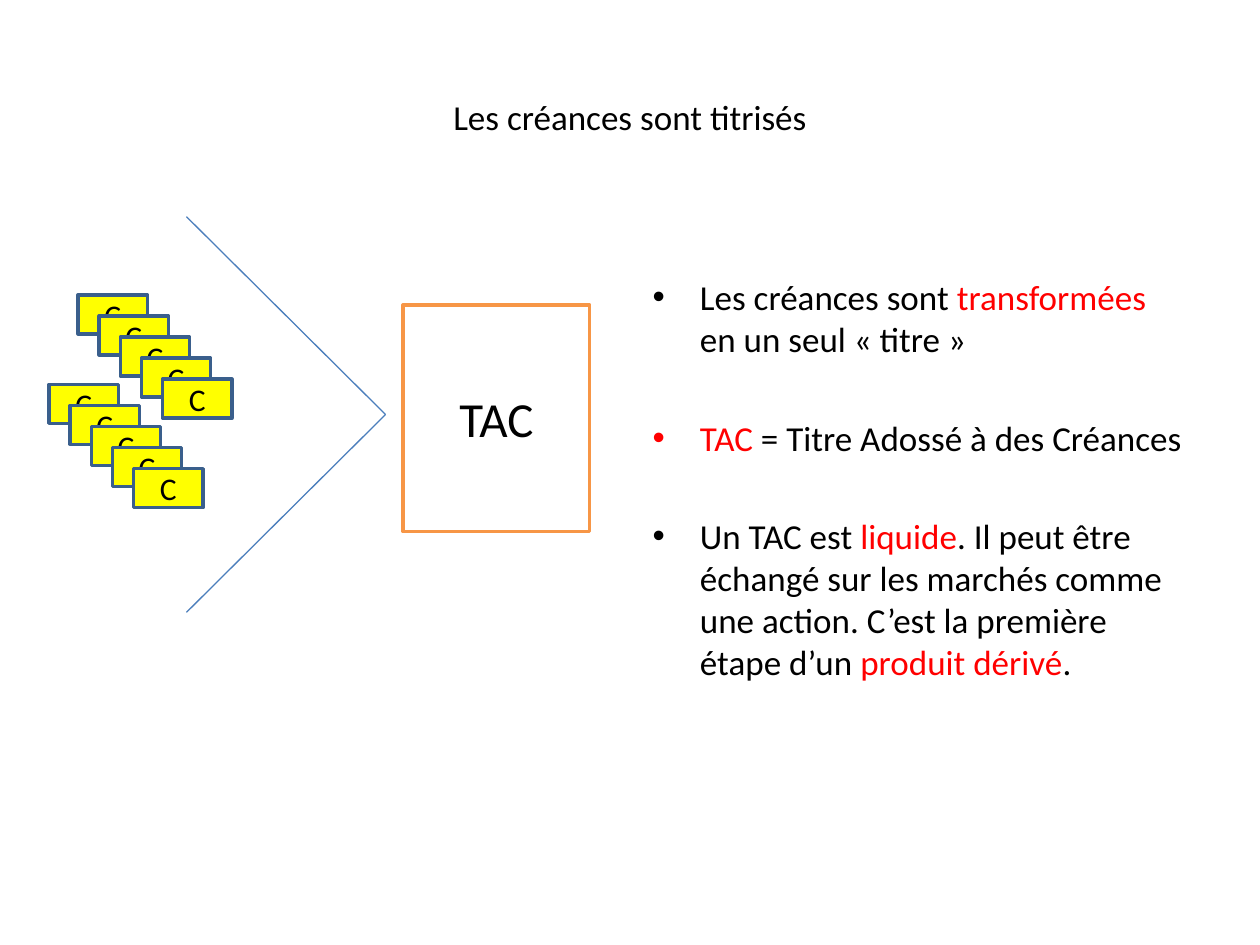
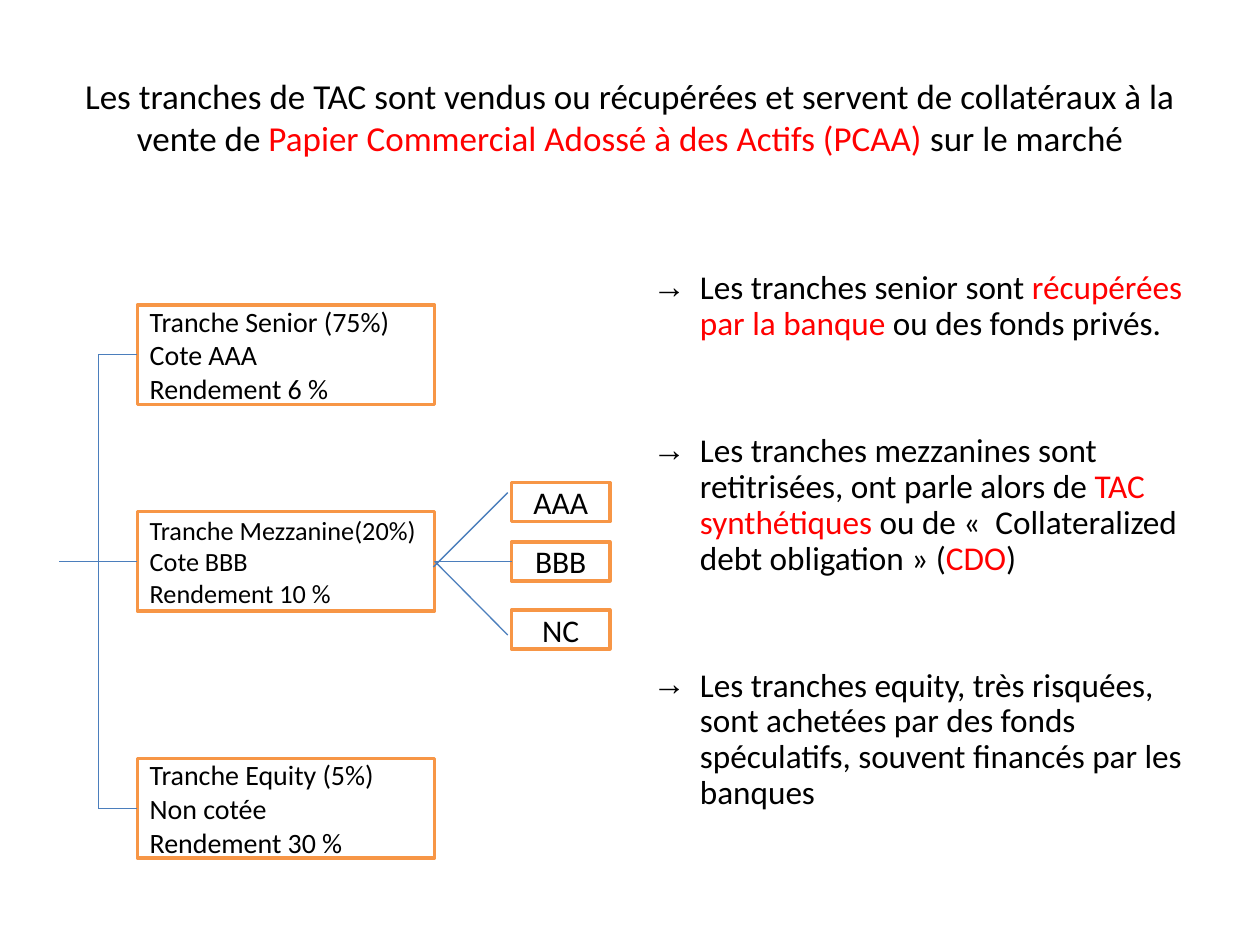
from lxml import etree
from pptx import Presentation
from pptx import util as u
from pptx.dml.color import RGBColor
from pptx.enum import shapes, text
from pptx.oxml import ns

CLAIMS_SLIDE = {
    "title": "Les créances sont titrisés",
    "points": [
        "Les créances sont *transformées* en un seul « titre » ",
        "*TAC* = Titre Adossé à des Créances",
        "Un TAC est *liquide*. Il peut être échangé sur les marchés comme une action. "
        "C’est la première étape d’un *produit dérivé*.",
    ],
    "bullet": "•", "size": 20, "leading": 1.0, "gap": 32, "top": 2.14,
}
TRANCHES_SLIDE = {
    "title": "Les tranches de TAC sont vendus ou récupérées et servent de collatéraux à la "
             "vente de *Papier Commercial Adossé à des Actifs (PCAA)* sur le marché",
    "points": [
        "Les tranches senior sont *récupérées par la banque* ou des fonds privés.",
        "Les tranches mezzanines sont retitrisées, ont parle alors de *TAC synthétiques* "
        "ou de «  Collateralized debt obligation » (*CDO*)",
        "Les tranches equity, très risquées, sont achetées par des fonds spéculatifs, "
        "souvent financés par les banques",
    ],
    "bullet": "→", "size": 19, "leading": 0.9, "gap": 52, "top": 2.1,
}
CLAIM_STACKS = [(0.62, 2.34), (0.39, 3.05)]
CLAIMS_PER_STACK = 5
CLAIM_STEP = 0.1675
FUNNEL = [(1.48, 1.72), (3.06, 3.29), (1.48, 4.86)]
TRANCHES = [
    (2.42, 16, ["Tranche Senior (75%)", "Cote AAA", "Rendement 6 %"]),
    (4.06, 15, ["Tranche Mezzanine(20%)", "Cote BBB", "Rendement 10 %"]),
    (6.02, 16, ["Tranche Equity (5%)", "Non cotée", "Rendement 30 %"]),
]
RATINGS = [("AAA", 3.83), ("BBB", 4.3), ("NC", 4.84)]

FONT = "Calibri"
BLACK = RGBColor(0, 0, 0)
WHITE = RGBColor(255, 255, 255)
RED = RGBColor(255, 0, 0)
YELLOW = RGBColor(255, 255, 0)
NAVY = RGBColor(0x3A, 0x5F, 0x8C)
BLUE = RGBColor(0x4B, 0x7E, 0xBC)
ORANGE = RGBColor(0xF7, 0x96, 0x46)

TITLE_AREA = (0.5, 0.3, 9, 1.25)
BODY_LEFT, BODY_WIDTH, BODY_BOTTOM = 5.08, 4.42, 7.0
CLAIM_SIZE = (0.55, 0.31)
TRANCHE_LEFT, TRANCHE_WIDTH, TRANCHE_HEIGHT = 1.09, 2.36, 0.79
RATING_LEFT, RATING_SIZE = 4.06, (0.78, 0.31)
TRUNK_X, TRUNK_START = 0.78, 0.47


def place(part, left, top, width, height):
    part.left, part.top = u.Inches(left), u.Inches(top)
    part.width, part.height = u.Inches(width), u.Inches(height)


def style(run, size, color=BLACK):
    run.font.name, run.font.size = FONT, u.Pt(size)
    run.font.color.rgb = color


def write_marked(paragraph, marked, size):
    for index, piece in enumerate(marked.split("*")):
        if piece:
            run = paragraph.add_run()
            run.text = piece
            style(run, size, RED if index % 2 else BLACK)


def set_bullet(paragraph, char):
    properties = paragraph._p.get_or_add_pPr()
    etree.SubElement(properties, ns.qn("a:buChar")).set("char", char)


def start_slide(deck, content):
    slide = deck.slides.add_slide(deck.slide_layouts[1])
    title, body = slide.shapes.title, slide.placeholders[1]
    place(title, *TITLE_AREA)
    write_marked(title.text_frame.paragraphs[0], content["title"], 20)
    top = content["top"]
    place(body, BODY_LEFT, top, BODY_WIDTH, BODY_BOTTOM - top)
    for frame in (title.text_frame, body.text_frame):
        frame.auto_size = text.MSO_AUTO_SIZE.NONE
    for index, point in enumerate(content["points"]):
        frame = body.text_frame
        paragraph = frame.add_paragraph() if index else frame.paragraphs[0]
        paragraph.line_spacing = content["leading"]
        paragraph.space_before = u.Pt(content["gap"] if index else 0)
        set_bullet(paragraph, content["bullet"])
        write_marked(paragraph, point, content["size"])
    return slide


def add_box(slide, area, lines, size, fill=WHITE, border=ORANGE, align=text.PP_ALIGN.CENTER):
    box = slide.shapes.add_shape(shapes.MSO_SHAPE.RECTANGLE, *map(u.Inches, area))
    box.shadow.inherit = False
    box.fill.solid()
    box.fill.fore_color.rgb = fill
    box.line.color.rgb, box.line.width = border, u.Pt(2)
    box.text_frame.text = "\n".join(lines)
    box.text_frame.vertical_anchor = text.MSO_ANCHOR.MIDDLE
    for paragraph in box.text_frame.paragraphs:
        paragraph.alignment = align
        for run in paragraph.runs:
            style(run, size)
    return box


def add_line(slide, start, end, source=None, target=None):
    line = slide.shapes.add_connector(
        shapes.MSO_CONNECTOR.STRAIGHT, *map(u.Inches, (*start, *end)))
    line.line.color.rgb, line.line.width = BLUE, u.Pt(0.75)
    etree.SubElement(line._element.spPr, ns.qn("a:effectLst"))
    if source:
        line.begin_connect(source, 3)
    if target:
        line.end_connect(target, 1)


def build_claims(deck):
    slide = start_slide(deck, CLAIMS_SLIDE)
    for left, top in CLAIM_STACKS:
        for index in range(CLAIMS_PER_STACK):
            shift = index * CLAIM_STEP
            add_box(slide, (left + shift, top + shift, *CLAIM_SIZE), ["C"], 18, YELLOW, NAVY)
    for start, end in zip(FUNNEL, FUNNEL[1:]):
        add_line(slide, start, end)
    add_box(slide, (3.2, 2.42, 1.48, 1.8), ["TAC"], 28)


def build_tranches(deck):
    slide = start_slide(deck, TRANCHES_SLIDE)
    middles = [top + TRANCHE_HEIGHT / 2 for top, _, _ in TRANCHES]
    center = middles[1]
    add_line(slide, (TRUNK_START, center), (TRUNK_X, center))
    add_line(slide, (TRUNK_X, middles[0]), (TRUNK_X, middles[-1]))
    tranches = []
    for (top, size, lines), middle in zip(TRANCHES, middles):
        tranche = add_box(slide, (TRANCHE_LEFT, top, TRANCHE_WIDTH, TRANCHE_HEIGHT),
                          lines, size, align=text.PP_ALIGN.LEFT)
        add_line(slide, (TRUNK_X, middle), (TRANCHE_LEFT, middle), target=tranche)
        tranches.append(tranche)
    ratings = [add_box(slide, (RATING_LEFT, top, *RATING_SIZE), [name], 18)
               for name, top in RATINGS]
    fan = (TRANCHE_LEFT + TRANCHE_WIDTH, center)
    mezzanine = tranches[1]
    add_line(slide, (3.44, 4.5), (4.03, 3.91))
    add_line(slide, fan, (4.03, 5.04), source=mezzanine)
    add_line(slide, fan, (RATING_LEFT, center), source=mezzanine, target=ratings[1])


def main():
    deck = Presentation()
    deck.slide_width, deck.slide_height = u.Inches(10), u.Inches(7.5)
    build_claims(deck)
    build_tranches(deck)
    deck.save("out.pptx")


if __name__ == "__main__":
    main()
